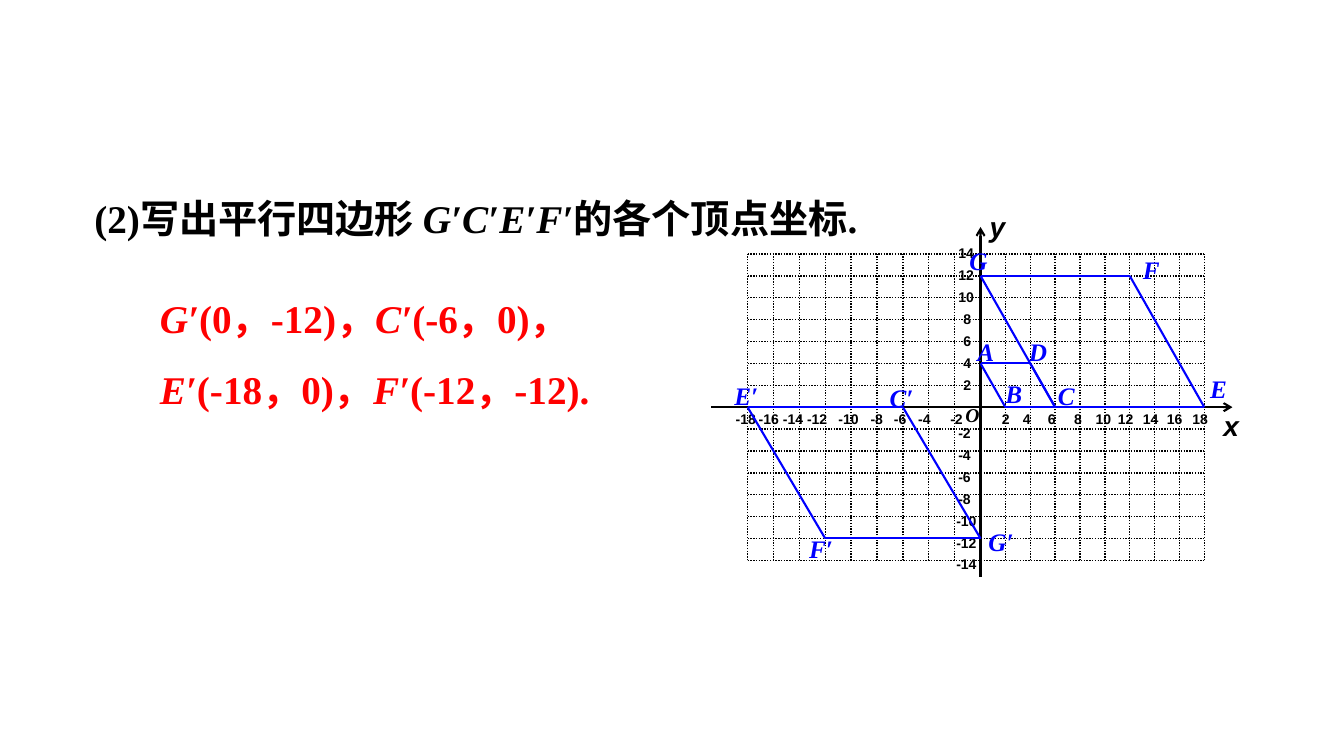
from lxml.etree import SubElement
from pptx import Presentation
from pptx.dml.color import RGBColor
from pptx.enum.dml import MSO_LINE
from pptx.enum.shapes import MSO_CONNECTOR
from pptx.enum.text import MSO_AUTO_SIZE
from pptx.oxml.ns import qn
from pptx.util import Cm, Pt

COLORS = {"ink": "000000", "figure": "0000FF", "answer": "FF0000"}
SERIF, SANS = "Times New Roman", "Arial"

VERTICES = {
    "A": (0, 4), "B": (2, 0), "C": (6, 0), "D": (4, 4),
    "E": (18, 0), "F": (12, 12), "G": (0, 12),
    "C′": (-6, 0), "E′": (-18, 0), "F′": (-12, -12), "G′": (0, -12),
}
PARALLELOGRAMS = [
    ("A", "B", "C", "D"),
    ("G", "C", "E", "F"),
    ("G′", "C′", "E′", "F′"),
]
VERTEX_LABELS = {
    "A": (6.45, 2.64), "B": (7.16, 3.68), "C": (8.48, 3.73), "D": (7.75, 2.62),
    "E": (12.32, 3.56), "F": (10.62, 0.56), "G": (6.25, 0.33),
    "C′": (4.24, 3.78), "E′": (0.33, 3.73), "F′": (2.21, 7.59), "G′": (6.73, 7.42),
}
X_TICK_LEFTS = {
    -18: 0.61, -16: 1.19, -14: 1.8, -12: 2.41, -10: 3.2, -8: 4.01,
    -6: 4.6, -4: 5.21, -2: 6.02, 2: 7.32, 4: 7.85, 6: 8.48, 8: 9.14,
    10: 9.68, 12: 10.24, 14: 10.87, 16: 11.48, 18: 12.12,
}
Y_TICK_LEFTS = {1: 6.35, 2: 6.22, 3: 6.17}

QUESTION = [[("(2)写出平行四边形 ", False), ("G′C′E′F′", True), ("的各个顶点坐标.", False)]]
ANSWER = [
    [("G′", True), ("(0，-12)，", False), ("C′", True), ("(-6，0)，", False)],
    [("E′", True), ("(-18，0)，", False), ("F′", True), ("(-12，-12).", False)],
]


def style_run(run, size, font, color, italic):
    """Apply the bold lettering used all over the slide."""
    run.font.size = Pt(size)
    run.font.name = font
    run.font.bold = True
    run.font.italic = italic
    run.font.color.rgb = RGBColor.from_string(COLORS[color])


def new_frame(slide, left, top, width, height):
    """Add a wrapping text box that grows with its text."""
    frame = slide.shapes.add_textbox(Cm(left), Cm(top), Cm(width), Cm(height)).text_frame
    frame.word_wrap = True
    frame.auto_size = MSO_AUTO_SIZE.SHAPE_TO_FIT_TEXT
    return frame


def add_label(slide, text, box, size, font=SERIF, color="ink", italic=True, inset=True):
    """Write a short label on the coordinate plane."""
    frame = new_frame(slide, *box)
    if not inset:
        frame.margin_left = frame.margin_right = 0
        frame.margin_top = frame.margin_bottom = 0
    frame.text = text
    style_run(frame.paragraphs[0].runs[0], size, font, color, italic)


def add_segment(slide, start, end, color="ink", width=1.5, dotted=False, arrow=False):
    """Draw a straight line between two points given in centimetres."""
    ends = [Cm(length) for length in (*start, *end)]
    segment = slide.shapes.add_connector(MSO_CONNECTOR.STRAIGHT, *ends)
    segment.line.color.rgb = RGBColor.from_string(COLORS[color])
    segment.line.width = Pt(width)
    if dotted:
        segment.line.dash_style = MSO_LINE.ROUND_DOT
    if arrow:
        SubElement(segment.line._get_or_add_ln(), qn("a:tailEnd"), type="arrow")
    SubElement(segment._element.spPr, qn("a:effectLst"))


def add_statement(slide, lines, box, color):
    """Write lines of mixed upright and italic text."""
    frame = new_frame(slide, *box)
    for index, pieces in enumerate(lines):
        paragraph = frame.add_paragraph() if index else frame.paragraphs[0]
        paragraph.line_spacing = 1.5
        for text, italic in pieces:
            run = paragraph.add_run()
            run.text = text
            style_run(run, 28, SERIF, color, italic)


def add_plane(slide, left, top, width, height):
    """Draw the grid, axes, tick numbers and parallelograms inside the box."""
    origin_x, origin_y = left + 6.78, top + 4.54

    def point(x, y):
        """Turn plane coordinates into a place on the slide."""
        half_width = 5.64 if x > 0 else 5.87
        return origin_x + half_width * x / 18, origin_y - 3.86 * y / 14

    for y in range(-14, 15, 2):
        if y:
            add_segment(slide, point(-18, y), point(18, y), width=1, dotted=True)
    for x in X_TICK_LEFTS:
        add_segment(slide, point(x, -14), point(x, 14), width=1, dotted=True)

    add_segment(slide, (left, origin_y), (left + width, origin_y), arrow=True)
    add_segment(slide, (origin_x, top + height), (origin_x, top), arrow=True)

    for x, tick_left in X_TICK_LEFTS.items():
        box = (left + tick_left, top + 4.62, 0.6, 0.43)
        add_label(slide, str(x), box, 10, SANS, italic=False, inset=False)
    for y in range(-14, 15, 2):
        if y:
            rise = 0.23 if y > 0 else 0.11
            box = (left + Y_TICK_LEFTS[len(str(y))], point(0, y)[1] - rise, 0.6, 0.43)
            add_label(slide, str(y), box, 10, SANS, italic=False, inset=False)

    for corners in PARALLELOGRAMS:
        for start, end in zip(corners, corners[1:] + corners[:1]):
            add_segment(slide, point(*VERTICES[start]), point(*VERTICES[end]), "figure")
    for vertex, (x, y) in VERTEX_LABELS.items():
        label_width = 0.97 if len(vertex) == 1 else 1.2
        add_label(slide, vertex, (left + x, top + y, label_width, 1.02), 18, color="figure")

    add_label(slide, "O", (left + 6.15, top + 4.32, 0.9, 0.86), 14)
    add_label(slide, "y", (left + 7.01, top - 0.43, 0.64, 0.86), 20, SANS, inset=False)
    add_label(slide, "x", (left + 12.9, top + 4.57, 0.5, 0.86), 20, SANS, inset=False)


def main():
    """Build the slide and save it."""
    presentation = Presentation()
    presentation.slide_width, presentation.slide_height = Cm(33.87), Cm(19.05)
    slide = presentation.slides.add_slide(presentation.slide_layouts[6])
    add_plane(slide, 17.93, 5.72, 13.13, 8.81)
    add_statement(slide, QUESTION, (2.13, 4.19, 24, 1.83), "ink")
    add_statement(slide, ANSWER, (3.78, 6.71, 13.79, 3.63), "answer")
    presentation.save("out.pptx")


if __name__ == "__main__":
    main()
